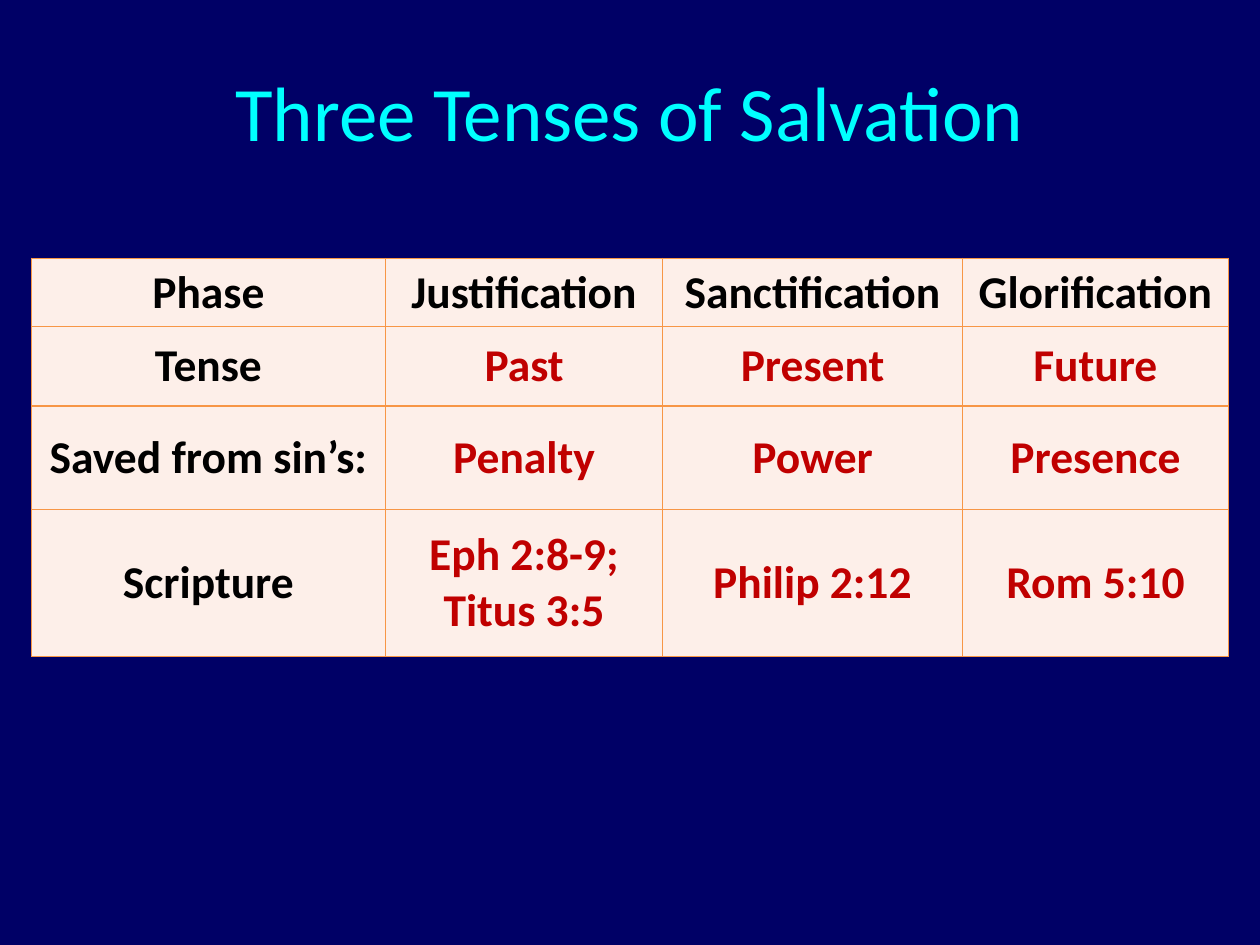
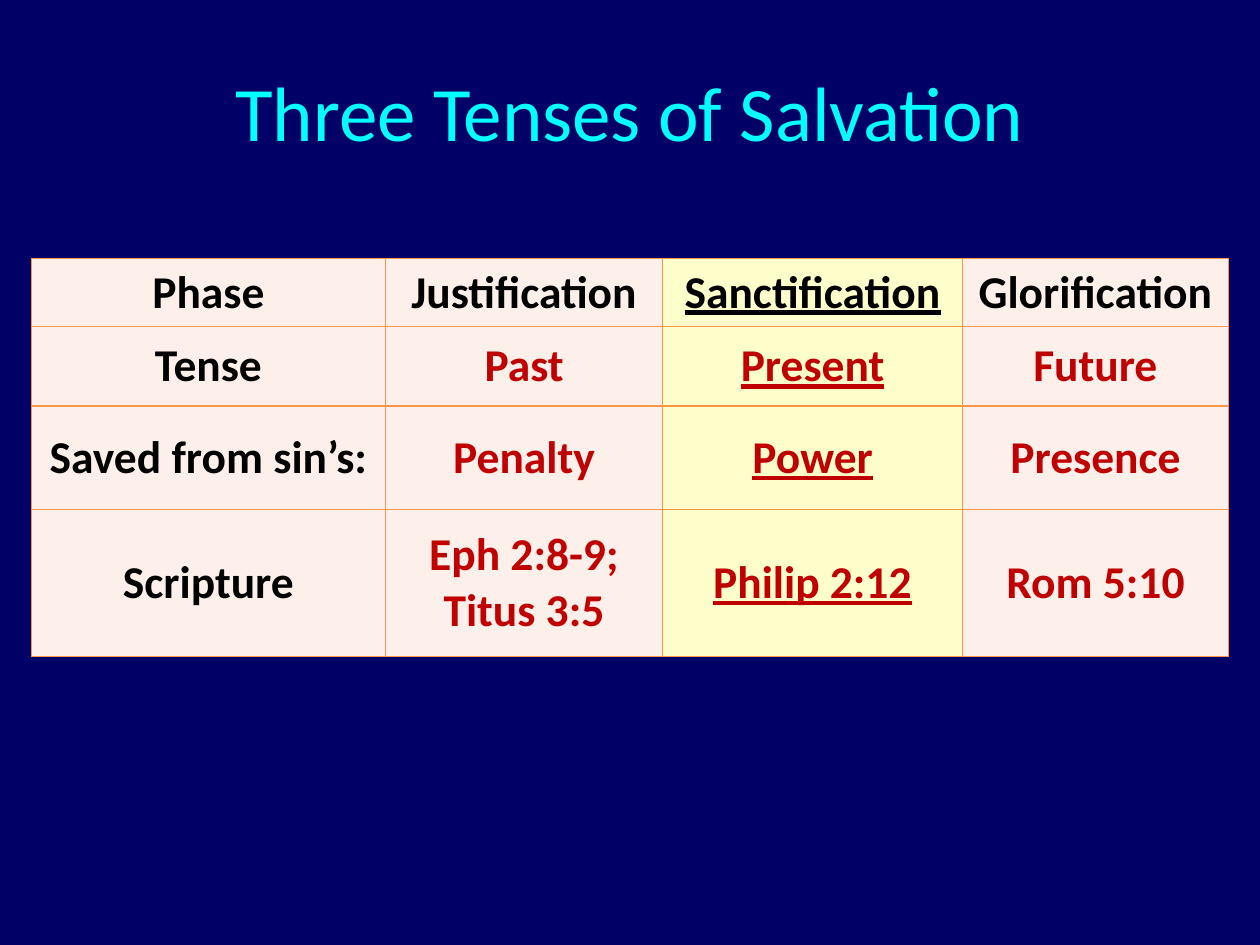
"""Build two slides on the three tenses of salvation, the second with a highlighted phase."""
from dataclasses import dataclass
from typing import Optional

from lxml import etree
from pptx import Presentation
from pptx.dml.color import RGBColor
from pptx.enum.text import MSO_ANCHOR, PP_ALIGN
from pptx.oxml.ns import qn
from pptx.presentation import Presentation as Deck
from pptx.slide import Slide
from pptx.table import _Cell
from pptx.text.text import TextFrame
from pptx.util import Inches, Pt

CENTER = PP_ALIGN.CENTER
MIDDLE = MSO_ANCHOR.MIDDLE

NAVY = RGBColor(0x00, 0x00, 0x66)
CYAN = RGBColor(0x00, 0xFF, 0xFF)
BLACK = RGBColor(0x00, 0x00, 0x00)
RED = RGBColor(0xC0, 0x00, 0x00)
BLUSH = RGBColor(0xFD, 0xEF, 0xE9)
PALE_YELLOW = RGBColor(0xFF, 0xFF, 0xCC)
ORANGE = RGBColor(0xF7, 0x96, 0x46)

FONT = "Calibri"
TITLE_ONLY = 5
BORDER_TAGS = ("a:lnL", "a:lnR", "a:lnT", "a:lnB")
COLUMN_WIDTHS = (2.81, 2.2, 2.38, 2.11)
ROW_HEIGHTS = (0.53, 0.63, 0.82, 1.17)
TENSES = (
    ("Phase", "Justification", "Sanctification", "Glorification"),
    ("Tense", "Past", "Present", "Future"),
    ("Saved from sin’s:", "Penalty", "Power", "Presence"),
    ("Scripture", "Eph 2:8-9; Titus 3:5", "Philip 2:12", "Rom 5:10"),
)


@dataclass(frozen=True)
class TenseSlide:
    """A slide's title and the phase column it highlights, if any."""
    title: str
    highlighted_phase: Optional[str] = None


SLIDES = (
    TenseSlide("Three Tenses of Salvation"),
    TenseSlide("Three Tenses of Salvation", "Sanctification"),
)


def write_text(frame: TextFrame, text: str, *, size: int, color: RGBColor,
               bold: bool = False, underline: bool = False) -> None:
    """Write one centred, formatted paragraph."""
    paragraph = frame.paragraphs[0]
    paragraph.alignment = CENTER
    run = paragraph.add_run()
    run.text = text
    run.font.name = FONT
    run.font.size = Pt(size)
    run.font.color.rgb = color
    run.font.bold = bold
    run.font.underline = underline


def add_borders(cell: _Cell, color: RGBColor, width: float) -> None:
    """Draw a solid line on all four sides of a cell."""
    properties = cell._tc.get_or_add_tcPr()
    for tag in BORDER_TAGS:
        line = etree.SubElement(properties, qn(tag), w=str(Pt(width)))
        solid = etree.SubElement(line, qn("a:solidFill"))
        etree.SubElement(solid, qn("a:srgbClr"), val=str(color))


def add_title(slide: Slide, text: str) -> None:
    """Place and format the title placeholder."""
    title = slide.shapes.title
    title.left, title.top = Inches(0.75), Inches(0.25)
    title.width, title.height = Inches(8.5), Inches(1.25)
    title.text_frame.vertical_anchor = MIDDLE
    write_text(title.text_frame, text, size=44, color=CYAN)


def add_tenses_table(slide: Slide, highlighted_phase: Optional[str]) -> None:
    """Add the table of tenses, marking the highlighted phase's column."""
    table = slide.shapes.add_table(
        len(ROW_HEIGHTS), len(COLUMN_WIDTHS), Inches(0.25), Inches(2.05),
        Inches(sum(COLUMN_WIDTHS)), Inches(sum(ROW_HEIGHTS))).table
    table.first_row = table.horz_banding = False
    for column, width in zip(table.columns, COLUMN_WIDTHS):
        column.width = Inches(width)
    for row, height in zip(table.rows, ROW_HEIGHTS):
        row.height = Inches(height)
    for row_index, entries in enumerate(TENSES):
        for column_index, entry in enumerate(entries):
            cell = table.cell(row_index, column_index)
            is_heading = row_index == 0 or column_index == 0
            is_highlighted = TENSES[0][column_index] == highlighted_phase
            cell.vertical_anchor = MIDDLE
            add_borders(cell, ORANGE, 1)
            cell.fill.solid()
            cell.fill.fore_color.rgb = PALE_YELLOW if is_highlighted else BLUSH
            write_text(cell.text_frame, entry, size=26, bold=True,
                       color=BLACK if is_heading else RED, underline=is_highlighted)


def add_tense_slide(deck: Deck, content: TenseSlide) -> None:
    """Add one slide with its title and table."""
    slide = deck.slides.add_slide(deck.slide_layouts[TITLE_ONLY])
    add_title(slide, content.title)
    add_tenses_table(slide, content.highlighted_phase)


def main() -> None:
    """Build and save the deck."""
    deck = Presentation()
    deck.slide_width, deck.slide_height = Inches(10), Inches(7.5)
    background = deck.slide_master.background.fill
    background.solid()
    background.fore_color.rgb = NAVY
    for content in SLIDES:
        add_tense_slide(deck, content)
    deck.save("out.pptx")


if __name__ == "__main__":
    main()
